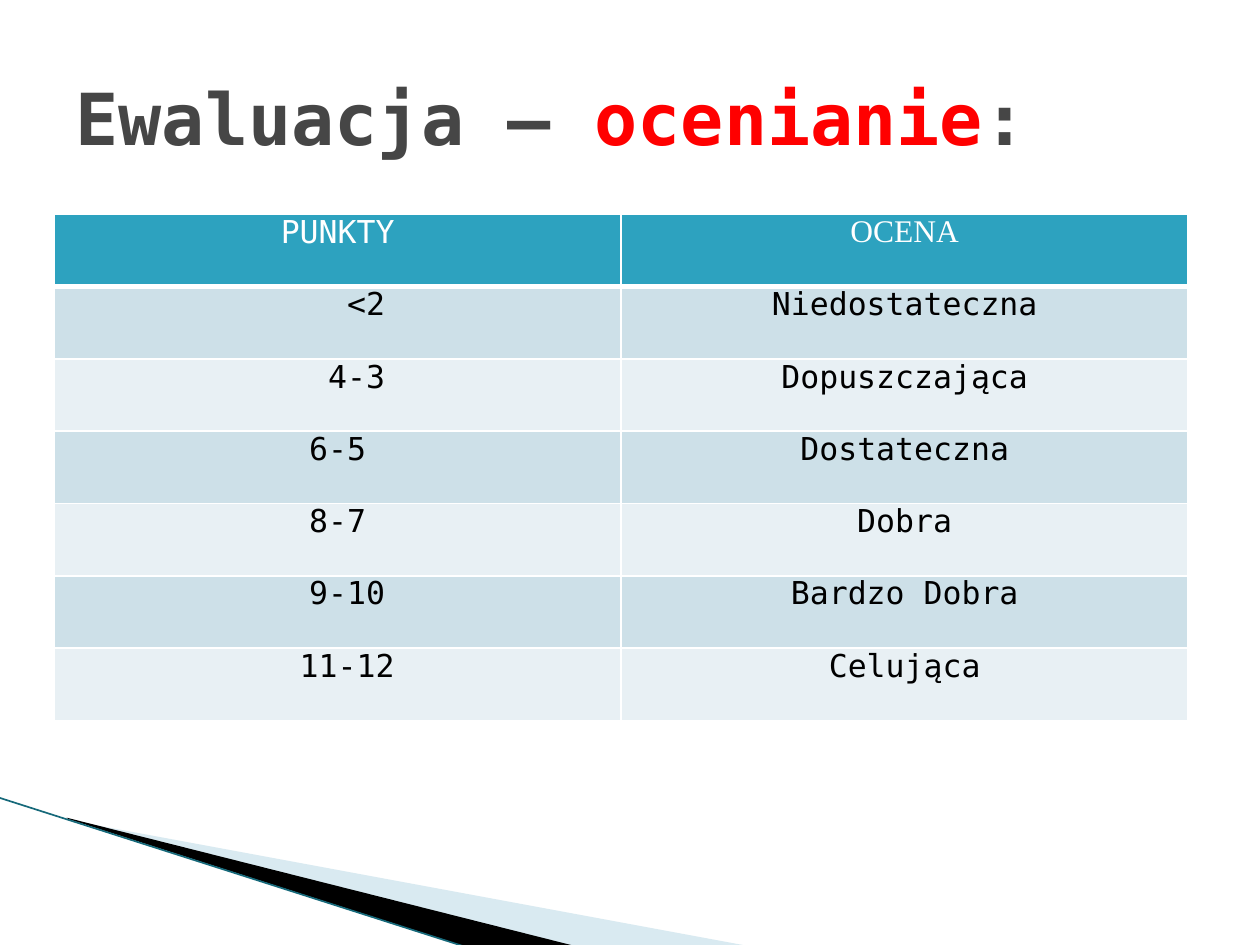
from lxml.etree import SubElement
from pptx import Presentation
from pptx.dml.color import RGBColor
from pptx.enum.shapes import MSO_CONNECTOR
from pptx.enum.text import MSO_ANCHOR, MSO_AUTO_SIZE, PP_ALIGN
from pptx.oxml import parse_xml
from pptx.oxml.ns import nsdecls, qn
from pptx.util import Inches, Pt

MONO = "DejaVu Sans Mono"
SERIF = "Times New Roman"
TITLE = [("Ewaluacja – ", "464646"), ("ocenianie", "FF0000"), (":", "464646")]
HEADER = ("PUNKTY", "OCENA")
GRADES = [
    ("<2", "Niedostateczna", 3),
    ("4-3", "Dopuszczająca", 2),
    ("6-5", "Dostateczna", 0),
    ("8-7", "Dobra", 0),
    ("9-10", "Bardzo Dobra", 1),
    ("11-12", "Celująca", 1),
]
CHARACTER_WIDTH = 0.15
WEDGES = [
    ([(0.55, 6.51), (5.95, 7.51), (4.56, 7.51), (0.55, 6.5)], "A0CBDC", 40),
    ([(0.53, 6.49), (4.57, 7.51), (3.72, 7.52), (0.54, 6.5)], "000000", 100),
]


def color(value):
    return RGBColor.from_string(value)


def add_wedge(slide, points, fill, opacity):
    corners = [(Inches(x), Inches(y)) for x, y in points]
    builder = slide.shapes.build_freeform(*corners[0], scale=1.0)
    builder.add_line_segments(corners[1:], close=True)
    shape = builder.convert_to_shape()
    shape.shadow.inherit = False
    shape.line.fill.background()
    shape.fill.solid()
    shape.fill.fore_color.rgb = color(fill)
    if opacity < 100:
        tint = shape.fill._xPr.find(qn("a:solidFill"))[0]
        SubElement(tint, qn("a:alpha")).set("val", str(opacity * 1000))


def add_edge_line(slide):
    line = slide.shapes.add_connector(
        MSO_CONNECTOR.STRAIGHT, Inches(-0.01), Inches(6.33), Inches(3.71), Inches(7.52)
    )
    line.line.color.rgb = color("16697A")
    line.line.width = Pt(0.95)
    SubElement(line._element.spPr, qn("a:effectLst"))


def set_borders(cell, bottom_width):
    widths = {"lnL": 1, "lnR": 1, "lnT": 1, "lnB": bottom_width}
    properties = cell._tc.get_or_add_tcPr()
    for position, (tag, width) in enumerate(widths.items()):
        properties.insert(position, parse_xml(
            f'<a:{tag} {nsdecls("a")} w="{Pt(width)}"><a:solidFill>'
            f'<a:srgbClr val="FFFFFF"/></a:solidFill></a:{tag}>'
        ))


def fill_cell(cell, text, fill, text_color, font=MONO, indent=0, bottom_width=1):
    cell.text = text
    cell.margin_left = Inches(0.07 + indent * CHARACTER_WIDTH)
    cell.margin_right = Inches(0.07)
    cell.margin_top = cell.margin_bottom = 0
    cell.fill.solid()
    cell.fill.fore_color.rgb = color(fill)
    set_borders(cell, bottom_width)
    paragraph = cell.text_frame.paragraphs[0]
    paragraph.alignment = PP_ALIGN.CENTER
    paragraph.font.name = font
    paragraph.font.size = Pt(18)
    paragraph.font.bold = False
    paragraph.font.color.rgb = color(text_color)


def add_grades(slide):
    row_count = len(GRADES) + 1
    table = slide.shapes.add_table(
        row_count, 2, Inches(0.43), Inches(1.7), Inches(9), Inches(4.02)
    ).table
    for column, (text, font) in enumerate(zip(HEADER, (MONO, SERIF))):
        fill_cell(table.cell(0, column), text, "2DA2BF", "FFFFFF", font, bottom_width=3)
    for row, (points, grade, indent) in enumerate(GRADES, start=1):
        fill = "CDE0E8" if row % 2 else "E8F0F4"
        fill_cell(table.cell(row, 0), points, fill, "000000", indent=indent)
        fill_cell(table.cell(row, 1), grade, fill, "000000")


def set_title(slide):
    title = slide.shapes.title
    title.left, title.top = Inches(0.5), Inches(0.3)
    title.width, title.height = Inches(9), Inches(1.25)
    frame = title.text_frame
    frame.word_wrap = True
    frame.auto_size = MSO_AUTO_SIZE.NONE
    frame.vertical_anchor = MSO_ANCHOR.MIDDLE
    paragraph = frame.paragraphs[0]
    paragraph.alignment = PP_ALIGN.LEFT
    paragraph.font.name = MONO
    paragraph.font.size = Pt(41)
    paragraph.font.bold = True
    for text, text_color in TITLE:
        run = paragraph.add_run()
        run.text = text
        run.font.color.rgb = color(text_color)


def main():
    presentation = Presentation()
    presentation.slide_width = Inches(10)
    presentation.slide_height = Inches(7.5)
    slide = presentation.slides.add_slide(presentation.slide_layouts[5])
    for wedge in WEDGES:
        add_wedge(slide, *wedge)
    add_edge_line(slide)
    add_grades(slide)
    set_title(slide)
    presentation.save("out.pptx")


if __name__ == "__main__":
    main()
